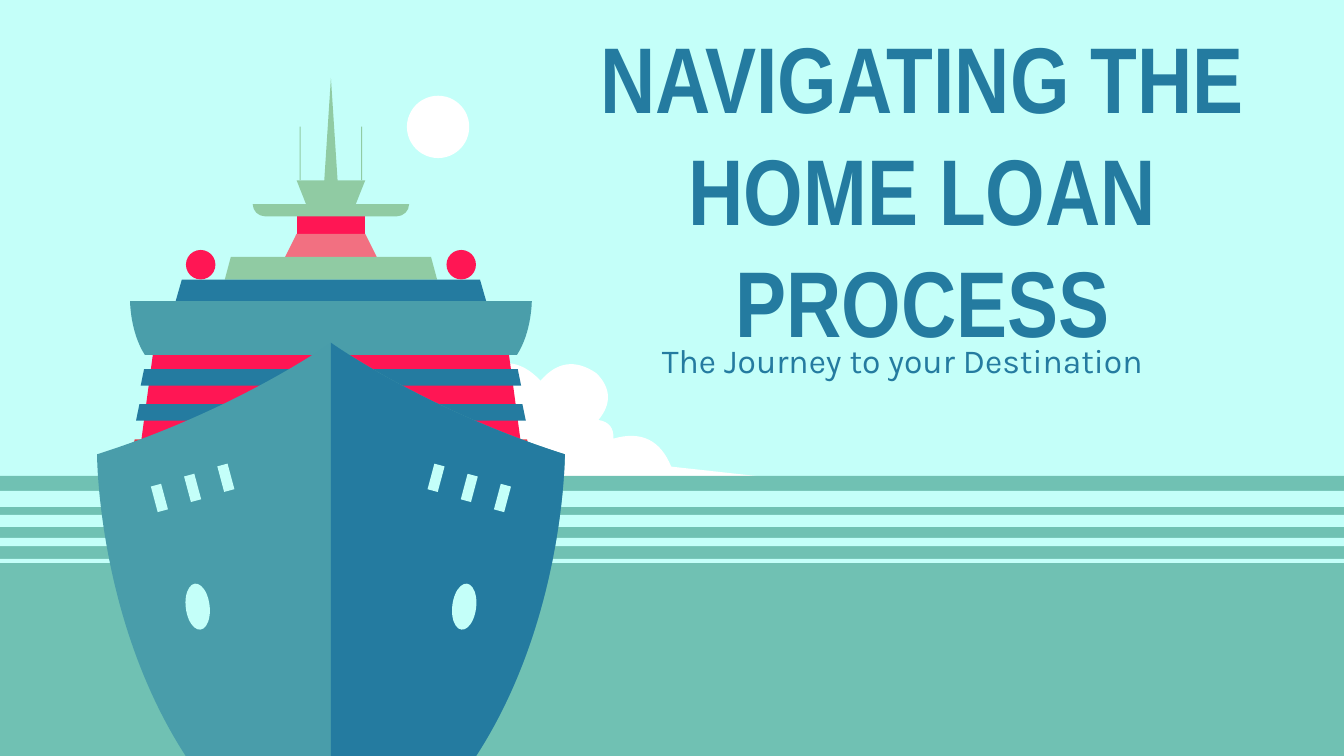
from collections import namedtuple
from itertools import pairwise

from lxml import etree
from pptx import Presentation
from pptx.dml.color import RGBColor
from pptx.enum.shapes import MSO_SHAPE
from pptx.enum.text import MSO_ANCHOR, PP_ALIGN
from pptx.oxml.ns import qn
from pptx.util import Pt

OVAL, RECTANGLE = MSO_SHAPE.OVAL, MSO_SHAPE.RECTANGLE
MIDDLE, CENTER = MSO_ANCHOR.MIDDLE, PP_ALIGN.CENTER

SKY, SEA, WHITE = "C4FFF9", "70C1B3", "FFFFFF"
NAVY, TEAL, HULL_TEAL = "247BA0", "4A9EAA", "499DAA"
RED, DARK_RED, CORAL, GREEN = "FF1654", "E63946", "F27081", "90CBA3"

Box = namedtuple("Box", "left top width height")

# Points between the puffs of the cloud, in points from its top left corner.
CLOUD = [(0, 70.6), (66, 58), (117, 37), (130, 23), (164, 0), (192, 16),
         (227, 19), (257, 15), (258, 40), (266, 50), (297, 65), (348, 70.6)]

# Starboard halves of ship parts: x from the centre line, y from the mast top.
# Two numbers are a straight line, six a Bézier curve.
BRIDGE = [(107.6, 119.5), (107.6, 119.5, 107.6, 136, 99.7, 148.3)]
PLATFORM = [(41.9, 67.6), (41.9, 71.2, 38.9, 74.1, 35.3, 74.1)]
BOW, KEEL = (0, 141.8), 363.2
HULL = [BOW, (0, 141.8, 50.4, 177.8, 125.3, 201.6),
        (125.3, 201.6, 125.3, 290, 77.8, KEEL)]

# Tiers from the cabin down: height, half width at top and bottom, colour.
TIERS = [(12.8, 18.4, 13.3, GREEN), (6.5, 18.2, 18.2, RED),
         (9.4, 18.2, 18.2, RED), (12.3, 18.4, 24.5, CORAL),
         (12.3, 53.6, 56.9, GREEN), (11.5, 79.9, 83.2, NAVY)]


def rgb(color):
    return RGBColor.from_string(color)


def paint(shape, color):
    shape.shadow.inherit = False
    shape.fill.solid()
    shape.fill.fore_color.rgb = rgb(color)
    shape.line.fill.background()


def add_preset(shapes, kind, box, color, rotation=0):
    shape = shapes.add_shape(kind, *(Pt(length) for length in box))
    shape.rotation = rotation
    paint(shape, color)


def add_centered(shapes, kind, x, y, width, height, color, rotation=0):
    box = Box(x - width / 2, y - height / 2, width, height)
    add_preset(shapes, kind, box, color, rotation)


def pairs(step):
    return list(zip(step[::2], step[1::2]))


def add_outline(shapes, outline, color, left, top):
    """Draw a closed outline, joining each curve's three points into one Bézier."""
    points = [(Pt(left + x), Pt(top + y)) for step in outline for x, y in pairs(step)]
    builder = shapes.build_freeform(*points[0])
    builder.add_line_segments(points[1:], close=True)
    shape = builder.convert_to_shape()
    lines = iter(list(shape._element.iter(qn("a:lnTo"))))
    for step in outline[1:]:
        line = next(lines)
        if len(step) == 6:
            curve = etree.Element(qn("a:cubicBezTo"))
            line.addprevious(curve)
            for part in (line, next(lines), next(lines)):
                curve.append(part[0])
                part.getparent().remove(part)
    paint(shape, color)


def both_sides(half):
    """Complete a starboard half with its mirrored port half."""
    points = iter([(-x, y) for step in half for x, y in pairs(step)][::-1])
    outline = [*half, next(points)]
    for step in half[:0:-1]:
        outline.append(sum((next(points) for _ in pairs(step)), ()))
    return outline


def add_text(slide, box, text, font_format, color):
    frame = slide.shapes.add_textbox(*(Pt(length) for length in box)).text_frame
    frame.word_wrap = True
    frame.vertical_anchor = MIDDLE
    for side in ("left", "top", "right", "bottom"):
        setattr(frame, f"margin_{side}", Pt(7.2))
    paragraph = frame.paragraphs[0]
    paragraph.alignment = CENTER
    run = paragraph.add_run()
    run.text = text
    for name, value in font_format.items():
        setattr(run.font, name, value)
    run.font.color.rgb = rgb(color)


def add_cloud(slide, box, bulge=0.3):
    outline = [CLOUD[0]]
    for (x1, y1), (x2, y2) in pairwise(CLOUD):
        across, down = x2 - x1, y2 - y1
        out_x, out_y = bulge * down, -bulge * across
        if x2 == CLOUD[-1][0]:
            out_x = out_y = 0
        outline.append((x1 + across / 3 + out_x, y1 + down / 3 + out_y,
                        x2 - across / 3 + out_x, y2 - down / 3 + out_y, x2, y2))
    add_outline(slide.shapes, outline, WHITE, box.left, box.top)


def add_sea(slide, box):
    add_preset(slide.shapes, RECTANGLE, box, SEA)
    for offset, height in ((8, 8.6), (20.9, 6.4), (33.2, 4.4), (44.4, 2.2)):
        stripe = Box(box.left, box.top + offset, box.width, height)
        add_preset(slide.shapes, RECTANGLE, stripe, SKY)


def add_ship(slide, box):
    shapes = slide.shapes.add_group_shape().shapes
    middle, top = box.left + box.width / 2, box.top

    def add_symmetric(half, color):
        add_outline(shapes, both_sides(half), color, middle, top)

    def add_tier(y, height, half_top, half_bottom, color):
        add_symmetric([(half_top, y), (half_bottom, y + height)], color)

    add_tier(148.3, 96.5, 95.4, 108.4, RED)
    for i, color in enumerate((NAVY, NAVY, DARK_RED)):
        add_tier(156 + 18.8 * i, 8.8, 100.1 + 2.5 * i, 101.9 + 2.5 * i, color)
    y = 54.8
    for height, *widths, color in TIERS:
        add_tier(y, height, *widths, color)
        y += height
    add_tier(0, 55.4, 0, 3.6, GREEN)
    add_symmetric(BRIDGE, TEAL)
    add_symmetric(PLATFORM, GREEN)
    add_symmetric(HULL, HULL_TEAL)
    add_outline(shapes, [*HULL, (0, KEEL)], NAVY, middle, top)
    for side in (-1, 1):
        add_centered(shapes, OVAL, middle + side * 69.8, top + 100, 15.8, 15.8, RED)
        add_centered(shapes, RECTANGLE, middle + side * 16.5, top + 40.4,
                     0.6, 28.8, GREEN)
        add_centered(shapes, OVAL, middle + side * 71.4, top + 283.2,
                     12.8, 24.8, SKY, side * 7)
        for i in range(3):
            add_centered(shapes, RECTANGLE, middle + side * (56.3 + 17.8 * i),
                         top + 214.2 + 5.4 * i, 5.7, 14.2, SKY, side * 15)


def main():
    presentation = Presentation()
    presentation.slide_width, presentation.slide_height = Pt(720), Pt(405)
    slide = presentation.slides.add_slide(presentation.slide_layouts[6])
    slide.background.fill.solid()
    slide.background.fill.fore_color.rgb = rgb(SKY)

    add_cloud(slide, Box(62.6, 185, 348, 70.6))
    add_text(slide, Box(299.5, 42.5, 389.5, 116.6), "NAVIGATING THE HOME LOAN PROCESS",
             {"name": "Arial Narrow", "size": Pt(50), "bold": True}, NAVY)
    add_text(slide, Box(299.5, 171.4, 367.9, 43.2), "The Journey to your Destination",
             {"name": "Karla", "size": Pt(18)}, NAVY)
    add_sea(slide, Box(0, 255, 720, 150))
    add_ship(slide, Box(52, 41.8, 250.6, 363.2))
    add_preset(slide.shapes, OVAL, Box(218, 51.3, 33.4, 33.4), WHITE)
    presentation.save("out.pptx")


if __name__ == "__main__":
    main()
